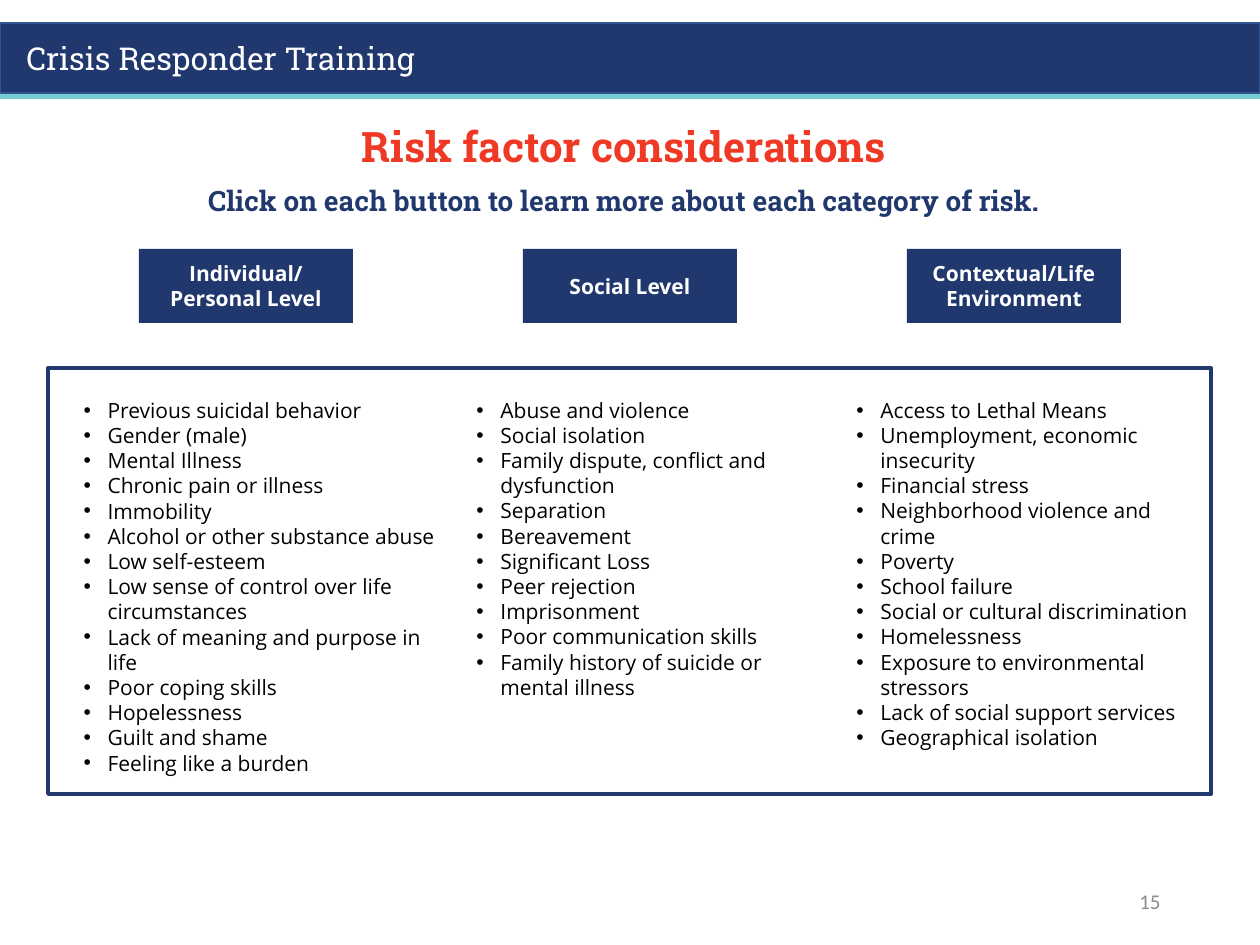
from lxml import etree
from pptx import Presentation
from pptx.dml.color import RGBColor
from pptx.enum.shapes import MSO_SHAPE
from pptx.enum.text import MSO_ANCHOR, MSO_AUTO_SIZE, PP_ALIGN
from pptx.oxml.ns import qn
from pptx.util import Emu, Pt

RECTANGLE = MSO_SHAPE.RECTANGLE
TOP, MIDDLE = MSO_ANCHOR.TOP, MSO_ANCHOR.MIDDLE
LEFT, CENTER, RIGHT = PP_ALIGN.LEFT, PP_ALIGN.CENTER, PP_ALIGN.RIGHT
FIXED_SIZE = MSO_AUTO_SIZE.NONE

PX_PER_INCH = 126
TWO_CONTENT_LAYOUT = 3
SERIF, SANS, NUMBER_FONT = "Roboto Slab", "Open Sans", "Calibri"
COLORS = {
    "navy": "20386D",
    "navy_edge": "325491",
    "teal": "72CCD2",
    "red": "EF3925",
    "gray": "8C8C8C",
    "black": "000000",
    "white": "FFFFFF",
}

INDIVIDUAL_RISKS = [
    "Previous suicidal behavior",
    "Gender (male)",
    "Mental Illness",
    "Chronic pain or illness",
    "Immobility",
    "Alcohol or other substance abuse",
    "Low self-esteem",
    "Low sense of control over life circumstances",
    "Lack of meaning and purpose in life",
    "Poor coping skills",
    "Hopelessness",
    "Guilt and shame",
    "Feeling like a burden",
]
SOCIAL_RISKS = [
    "Abuse and violence",
    "Social isolation",
    "Family dispute, conflict and dysfunction",
    "Separation",
    "Bereavement",
    "Significant Loss",
    "Peer rejection",
    "Imprisonment",
    "Poor communication skills",
    "Family history of suicide or mental illness",
]
CONTEXTUAL_RISKS = [
    "Access to Lethal Means",
    "Unemployment, economic insecurity",
    "Financial stress",
    "Neighborhood violence and crime",
    "Poverty",
    "School failure",
    "Social or cultural discrimination",
    "Homelessness",
    "Exposure to environmental stressors",
    "Lack of social support services",
    "Geographical isolation",
]
LEVELS = [
    ["Individual/", "Personal Level"],
    ["Social Level"],
    ["Contextual/Life Environment"],
]


def px(length):
    return Emu(round(length * 914400 / PX_PER_INCH))


def color(name):
    return RGBColor.from_string(COLORS[name])


def set_bullet(paragraph, bullet):
    properties = paragraph._p.get_or_add_pPr()
    indent = px(24) if bullet else 0
    properties.set("marL", str(indent))
    properties.set("indent", str(-indent))
    if bullet:
        etree.SubElement(properties, qn("a:buFont"), typeface="Arial")
        etree.SubElement(properties, qn("a:buChar"), char="•")
    else:
        etree.SubElement(properties, qn("a:buNone"))


def write_text(holder, lines, *, font=SANS, size=12, ink="black", bold=False,
               align=LEFT, anchor=TOP, spacing=1.0, bullet=False):
    frame = holder.text_frame
    frame.word_wrap = True
    frame.auto_size = FIXED_SIZE
    frame.vertical_anchor = anchor
    for index, line in enumerate(lines):
        paragraph = frame.add_paragraph() if index else frame.paragraphs[0]
        set_bullet(paragraph, bullet)
        paragraph.alignment = align
        paragraph.line_spacing = spacing
        paragraph.space_before = Pt(0)
        run = paragraph.add_run()
        run.text = line
        run.font.name = font
        run.font.size = Pt(size)
        run.font.bold = bold
        run.font.color.rgb = color(ink)


def place(holder, left, top, width, height):
    holder.left, holder.top = px(left), px(top)
    holder.width, holder.height = px(width), px(height)
    return holder


def add_text_box(slide, left, top, width, height):
    return slide.shapes.add_textbox(px(left), px(top), px(width), px(height))


def add_rectangle(slide, left, top, width, height, fill=None, edge=None, weight=1):
    rectangle = slide.shapes.add_shape(
        RECTANGLE, px(left), px(top), px(width), px(height))
    rectangle.shadow.inherit = False
    if fill:
        rectangle.fill.solid()
        rectangle.fill.fore_color.rgb = color(fill)
    else:
        rectangle.fill.background()
    if edge:
        rectangle.line.color.rgb = color(edge)
        rectangle.line.width = Pt(weight)
    else:
        rectangle.line.fill.background()
    return rectangle


def add_banner(slide):
    add_rectangle(slide, 0, 60, 1260, 39, fill="teal")
    add_rectangle(slide, 0, 23, 1260, 70, fill="navy", edge="navy_edge")
    course = add_text_box(slide, 14, 33, 466, 51)
    write_text(course, ["Crisis Responder Training"], font=SERIF, size=18, ink="white")


def add_level_buttons(slide):
    for index, label in enumerate(LEVELS):
        button = add_rectangle(slide, 139 + 384 * index, 249, 214, 74, fill="navy")
        write_text(button, label, ink="white", bold=True, align=CENTER, anchor=MIDDLE)


def main():
    deck = Presentation()
    deck.slide_width, deck.slide_height = px(1260), px(945)
    slide = deck.slides.add_slide(deck.slide_layouts[TWO_CONTENT_LAYOUT])
    prompt, individual, heading = slide.placeholders

    add_banner(slide)
    write_text(place(heading, 81, 120, 1086, 66), ["Risk factor considerations"],
               font=SERIF, size=24, ink="red", bold=True, align=CENTER, spacing=0.9)
    write_text(place(prompt, 81, 165, 1086, 74),
               ["Click on each button to learn more about each category of risk."],
               font=SERIF, size=16, ink="navy", bold=True, align=CENTER,
               anchor=MIDDLE, spacing=0.9)
    add_level_buttons(slide)

    add_rectangle(slide, 48, 368, 1163, 426, edge="navy", weight=2.25)
    columns = [
        (place(individual, 71, 391, 378, 403), INDIVIDUAL_RISKS),
        (add_text_box(slide, 464, 391, 345, 357), SOCIAL_RISKS),
        (add_text_box(slide, 844, 391, 358, 369), CONTEXTUAL_RISKS),
    ]
    for column, risks in columns:
        write_text(column, risks, bullet=True)

    page_number = add_text_box(slide, 890, 876, 283, 50)
    write_text(page_number, ["15"], font=NUMBER_FONT, ink="gray", align=RIGHT, anchor=MIDDLE)
    deck.save("out.pptx")


if __name__ == "__main__":
    main()
